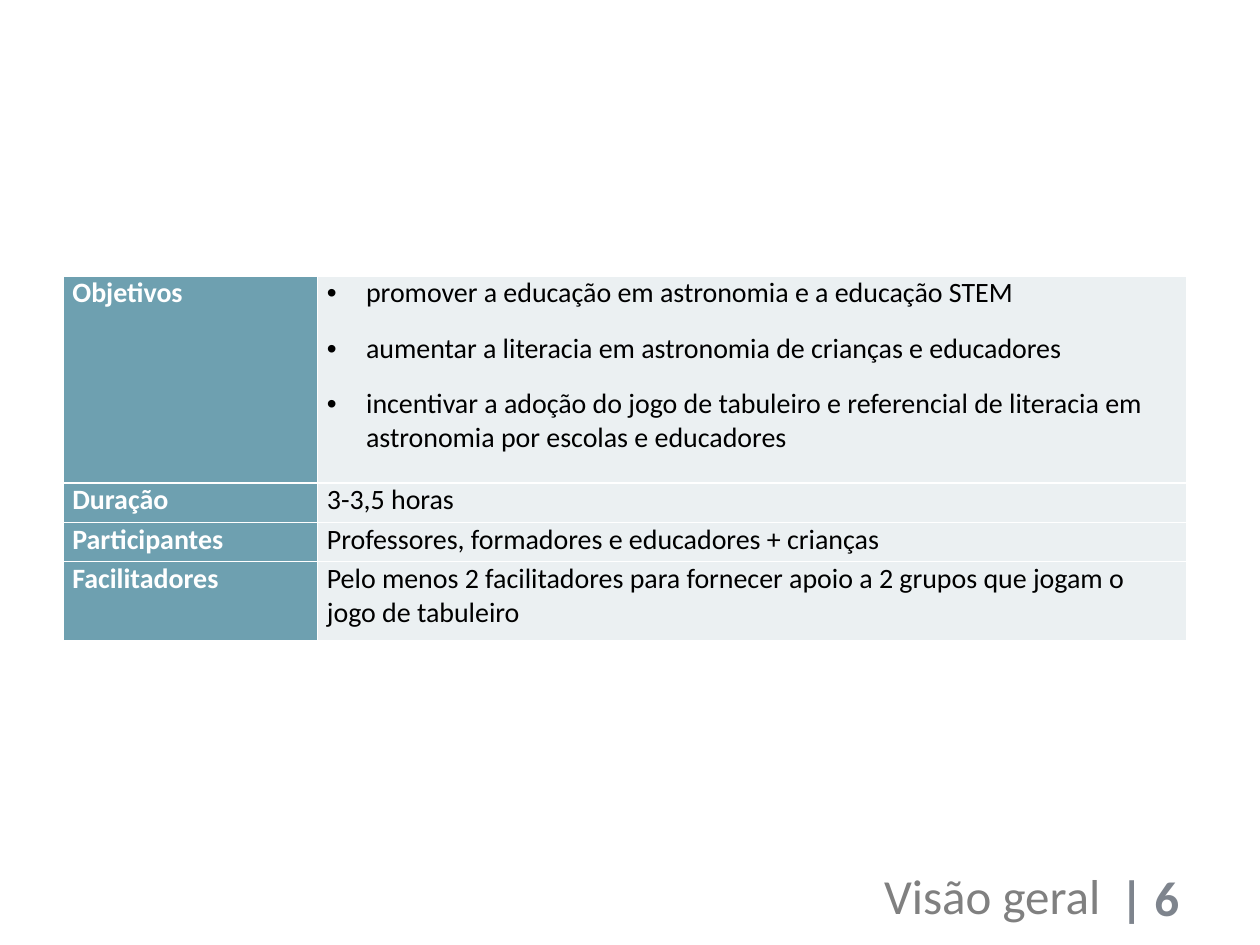
"""Build the workshop overview slide with its summary table."""
import pptx
import pptx.dml.color
import pptx.enum.text
import pptx.oxml
import pptx.oxml.ns
import pptx.util

Cm = pptx.util.Cm
Pt = pptx.util.Pt

ROWS = [
    ("Objetivos", [
        "promover a educação em astronomia e a educação STEM",
        "aumentar a literacia em astronomia de crianças e educadores",
        "incentivar a adoção do jogo de tabuleiro e referencial de literacia "
        "em astronomia por escolas e educadores",
    ]),
    ("Duração", ["3-3,5 horas"]),
    ("Participantes", ["Professores, formadores e educadores + crianças"]),
    ("Facilitadores", [
        "Pelo menos 2 facilitadores para fornecer apoio a 2 grupos que jogam "
        "o jogo de tabuleiro",
    ]),
]


def colour(value):
    return pptx.dml.color.RGBColor.from_string(value)


def element(tag, content="", attributes=""):
    namespace = pptx.oxml.ns.nsdecls("a")
    return pptx.oxml.parse_xml(f"<a:{tag} {namespace} {attributes}>{content}</a:{tag}>")


class Painter:
    font = "Calibri"
    label_fill = "6EA0B0"
    value_fill = "EBF0F2"
    border = "FFFFFF"

    def __init__(self, page):
        self.page = page

    def span(self, para, text, size, ink, bold=False):
        span = para.add_run()
        span.text = text
        span.font.name = self.font
        span.font.size = Pt(size)
        span.font.bold = bold
        span.font.color.rgb = colour(ink)

    def text(self, left, top, width, height, text, ink, align, bold=False):
        box = self.page.shapes.add_textbox(Cm(left), Cm(top), Cm(width), Cm(height))
        frame = box.text_frame
        frame.word_wrap = True
        frame.auto_size = pptx.enum.text.MSO_AUTO_SIZE.SHAPE_TO_FIT_TEXT
        para = frame.paragraphs[0]
        para.alignment = align
        self.span(para, text, 28, ink, bold)

    def bullet(self, para):
        properties = para._p.get_or_add_pPr()
        properties.set("marL", str(Cm(0.79)))
        properties.set("indent", str(-Cm(0.79)))
        properties.append(element("buFont", attributes='typeface="Arial"'))
        properties.append(element("buChar", attributes='char="•"'))

    def cell(self, cell, lines, fill, ink, bold):
        cell.margin_left = cell.margin_right = Cm(0.19)
        cell.margin_top = cell.margin_bottom = 0
        properties = cell._tc.get_or_add_tcPr()
        paint = f'<a:solidFill><a:srgbClr val="{self.border}"/></a:solidFill>'
        for side in ("lnL", "lnR", "lnT", "lnB"):
            properties.append(element(side, paint, f'w="{Pt(1)}"'))
        cell.fill.solid()
        cell.fill.fore_color.rgb = colour(fill)
        frame = cell.text_frame
        for index, line in enumerate(lines):
            para = frame.add_paragraph() if index else frame.paragraphs[0]
            para.space_before = para.space_after = Pt(6)
            if len(lines) > 1:
                self.bullet(para)
            self.span(para, line, 16, ink, bold)

    def table(self, left, top, widths, heights, rows):
        frame = self.page.shapes.add_table(
            len(rows), len(widths), Cm(left), Cm(top), Cm(sum(widths)), Cm(sum(heights)))
        table = frame.table
        table.first_row = table.horz_banding = False
        for column, width in zip(table.columns, widths):
            column.width = Cm(width)
        for index, (label, lines) in enumerate(rows):
            table.rows[index].height = Cm(heights[index])
            self.cell(table.cell(index, 0), [label], self.label_fill, "FFFFFF", True)
            self.cell(table.cell(index, 1), lines, self.value_fill, "000000", False)


def main():
    deck = pptx.Presentation()
    deck.slide_width, deck.slide_height = Cm(25.4), Cm(19.05)
    painter = Painter(deck.slides.add_slide(deck.slide_layouts[6]))
    align = pptx.enum.text.PP_ALIGN
    painter.text(22.33, 17.37, 2.87, 1.45, "| 6", "7E848D", align.LEFT, bold=True)
    painter.text(0.84, 17.32, 21.59, 1.45, "Visão geral", "808080", align.RIGHT)
    painter.table(1.27, 5.57, [5.13, 17.53], [4.17, 0.79, 0.79, 1.6], ROWS)
    deck.save("out.pptx")


if __name__ == "__main__":
    main()
